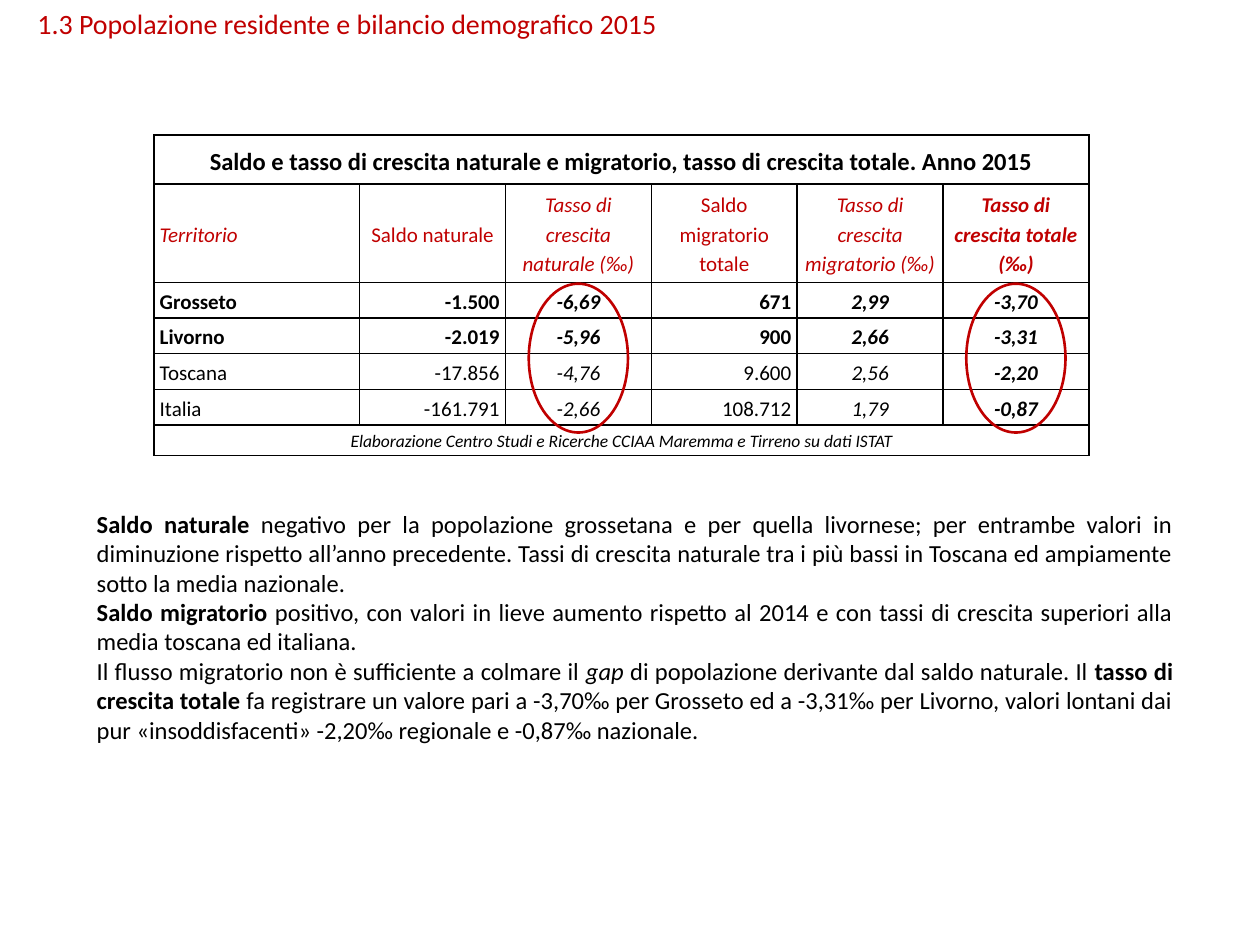
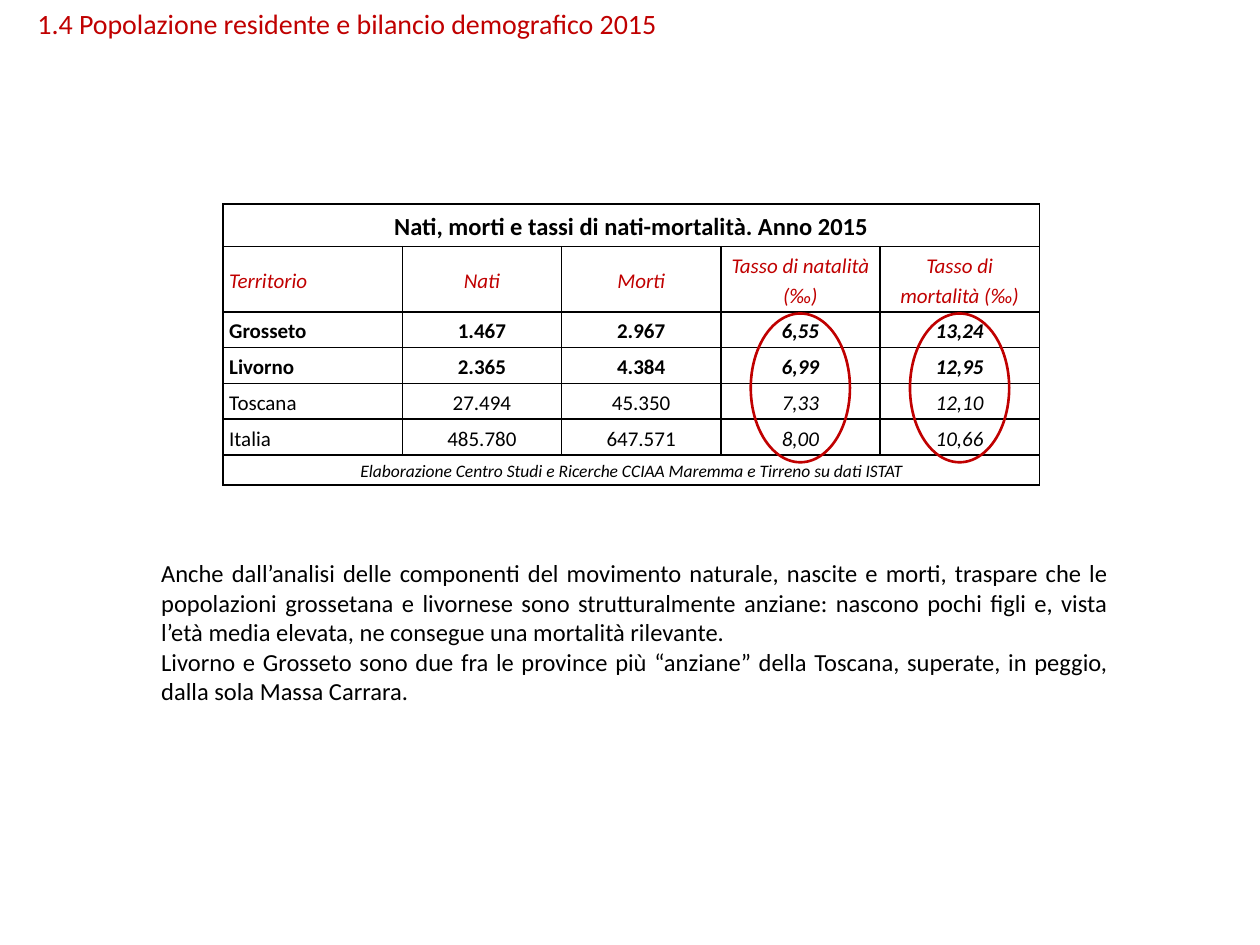
"""Build two slides on the 2015 population balance of Grosseto and Livorno."""
from lxml.etree import SubElement
from pptx import Presentation
from pptx.dml.color import RGBColor
from pptx.enum.shapes import MSO_SHAPE as Shape
from pptx.enum.text import MSO_ANCHOR as Anchor, MSO_AUTO_SIZE as AutoSize, PP_ALIGN as Align
from pptx.oxml.ns import qn
from pptx.util import Cm, Pt

RED = RGBColor(0xC0, 0x00, 0x00)
BLACK = RGBColor(0x00, 0x00, 0x00)
FONT = "Calibri"
ROW_HEIGHT, SOURCE_HEIGHT = 0.72, 0.61
OVAL_WIDTH, OVAL_HEIGHT = 2, 3
SOURCE = "Elaborazione Centro Studi e Ricerche CCIAA Maremma e Tirreno su dati ISTAT"

SLIDES = [
    {
        "title": "1.3 Popolazione residente e bilancio demografico 2015",
        "caption": "Saldo e tasso di crescita naturale e migratorio, tasso di crescita totale. Anno 2015",
        "rows": [
            ["Territorio", "Saldo naturale", "Tasso di crescita naturale (‰)",
             "Saldo migratorio totale", "Tasso di crescita migratorio (‰)",
             "Tasso di crescita totale (‰)"],
            ["Grosseto", "-1.500", "-6,69", "671", "2,99", "-3,70"],
            ["Livorno", "-2.019", "-5,96", "900", "2,66", "-3,31"],
            ["Toscana", "-17.856", "-4,76", "9.600", "2,56", "-2,20"],
            ["Italia", "-161.791", "-2,66", "108.712", "1,79", "-0,87"],
        ],
        "table_at": (3.1, 2.72), "first_width": 4.15, "column_width": 2.94,
        "head_heights": [0.99, 1.98],
        "rate_columns": {2, 4, 5}, "bold_columns": {5}, "circled_columns": [2, 5],
        "upright_headers": {1, 3}, "count_align": Align.RIGHT,
        "comment_box": (1.7, 10.13, 22.2, 5.05),
        "comment": [
            [("Saldo naturale ", "bold"),
             ("negativo per la popolazione grossetana e per quella livornese; per entrambe "
              "valori in diminuzione rispetto all’anno precedente. Tassi di crescita naturale "
              "tra i più bassi in Toscana ed ampiamente sotto la media nazionale.", "")],
            [("Saldo migratorio", "bold"),
             (" positivo, con valori in lieve aumento rispetto al 2014 e con tassi di crescita "
              "superiori alla media toscana ed italiana.", "")],
            [("Il flusso migratorio non è sufficiente a colmare il", ""),
             (" gap ", "italic"),
             ("di popolazione derivante dal saldo naturale. Il ", ""),
             ("tasso di crescita totale ", "bold"),
             ("fa registrare un valore pari a -3,70‰ per Grosseto ed a -3,31‰ per Livorno, "
              "valori lontani dai pur «insoddisfacenti» -2,20‰ regionale e -0,87‰ nazionale.", "")],
        ],
    },
    {
        "title": "1.4 Popolazione residente e bilancio demografico 2015",
        "caption": "Nati, morti e tassi di nati-mortalità. Anno 2015",
        "rows": [
            ["Territorio", "Nati", "Morti", "Tasso di natalità (‰)", "Tasso di mortalità (‰)"],
            ["Grosseto", "1.467", "2.967", "6,55", "13,24"],
            ["Livorno", "2.365", "4.384", "6,99", "12,95"],
            ["Toscana", "27.494", "45.350", "7,33", "12,10"],
            ["Italia", "485.780", "647.571", "8,00", "10,66"],
        ],
        "table_at": (4.5, 4.11), "first_width": 3.61, "column_width": 3.21,
        "head_heights": [0.86, 1.32],
        "rate_columns": {3, 4}, "bold_columns": set(), "circled_columns": [3, 4],
        "upright_headers": set(), "count_align": Align.CENTER,
        "comment_box": (3, 11.13, 19.6, 3.25),
        "comment": [
            [("Anche dall’analisi delle componenti del movimento naturale, nascite e morti, "
              "traspare che le popolazioni grossetana e livornese sono strutturalmente anziane: "
              "nascono pochi figli e, vista l’età media elevata, ne consegue una mortalità "
              "rilevante.", "")],
            [("Livorno e Grosseto sono due fra le province più “anziane” della Toscana, "
              "superate, in peggio, dalla sola Massa Carrara.", "")],
        ],
    },
]


def write_text(paragraph, text, size=12, color=BLACK, bold=False, italic=False,
               align=Align.LEFT, spacing=1.0):
    """Add a formatted run to a paragraph."""
    paragraph.alignment = align
    paragraph.line_spacing = spacing
    run = paragraph.add_run()
    run.text = text
    run.font.name, run.font.size, run.font.color.rgb = FONT, Pt(size), color
    run.font.bold, run.font.italic = bold, italic


def format_cell(cell):
    """Give a cell its margins, black borders and no fill."""
    cell.margin_left = cell.margin_right = Cm(0.12)
    cell.margin_top = cell.margin_bottom = 0
    cell.vertical_anchor = Anchor.MIDDLE
    properties = cell._tc.get_or_add_tcPr()
    for side in ("a:lnL", "a:lnR", "a:lnT", "a:lnB"):
        border = SubElement(properties, qn(side), w=str(Pt(1)))
        SubElement(SubElement(border, qn("a:solidFill")), qn("a:srgbClr"), val=str(BLACK))
    cell.fill.background()


presentation = Presentation()
presentation.slide_width, presentation.slide_height = Cm(25.4), Cm(19.05)

for content in SLIDES:
    slide = presentation.slides.add_slide(presentation.slide_layouts[5])
    title = slide.shapes.title
    title.left, title.top, title.width, title.height = Cm(0.5), Cm(0), Cm(19.6), Cm(0.94)
    title.text_frame.vertical_anchor = Anchor.TOP
    title.text_frame.auto_size = AutoSize.NONE
    write_text(title.text_frame.paragraphs[0], content["title"], size=16, color=RED)

    comment = slide.shapes.add_textbox(*map(Cm, content["comment_box"])).text_frame
    comment.word_wrap = True
    for index, runs in enumerate(content["comment"]):
        paragraph = comment.add_paragraph() if index else comment.paragraphs[0]
        for text, style in runs:
            write_text(paragraph, text, size=14, bold=style == "bold",
                       italic=style == "italic", align=Align.JUSTIFY)

    rows = content["rows"]
    left, top = content["table_at"]
    column_width = content["column_width"]
    widths = [content["first_width"]] + [column_width] * (len(rows[0]) - 1)
    heights = content["head_heights"] + [ROW_HEIGHT] * (len(rows) - 1) + [SOURCE_HEIGHT]
    table = slide.shapes.add_table(len(heights), len(widths), Cm(left), Cm(top),
                                   Cm(sum(widths)), Cm(sum(heights))).table
    table.first_row = table.horz_banding = False
    for column, width in zip(table.columns, widths):
        column.width = Cm(width)
    for row, height in zip(table.rows, heights):
        row.height = Cm(height)
    for cell in table.iter_cells():
        format_cell(cell)

    last = len(heights) - 1
    for row_index in (0, last):
        table.cell(row_index, 0).merge(table.cell(row_index, len(widths) - 1))
    write_text(table.cell(0, 0).text_frame.paragraphs[0], content["caption"], size=14,
               bold=True, align=Align.CENTER, spacing=1.15)
    write_text(table.cell(last, 0).text_frame.paragraphs[0], SOURCE, size=10,
               italic=True, align=Align.CENTER, spacing=1.15)

    for row_index, values in enumerate(rows):
        is_header = row_index == 0
        is_province = row_index in (1, 2)
        for column_index, value in enumerate(values):
            is_rate = column_index in content["rate_columns"]
            if column_index == 0:
                align = Align.LEFT
            else:
                align = Align.CENTER if is_header or is_rate else content["count_align"]
            write_text(
                table.cell(row_index + 1, column_index).text_frame.paragraphs[0], value,
                color=RED if is_header else BLACK,
                bold=is_province or column_index in content["bold_columns"],
                italic=column_index not in content["upright_headers"] if is_header else is_rate,
                align=align, spacing=1.15)

    for column_index in content["circled_columns"]:
        center = left + sum(widths[:column_index]) + column_width / 2
        oval = slide.shapes.add_shape(
            Shape.OVAL, Cm(center - OVAL_WIDTH / 2),
            Cm(top + sum(content["head_heights"]) + 0.03), Cm(OVAL_WIDTH), Cm(OVAL_HEIGHT))
        oval.shadow.inherit = False
        oval.fill.background()
        oval.line.color.rgb, oval.line.width = RED, Pt(1.5)

presentation.save("out.pptx")
